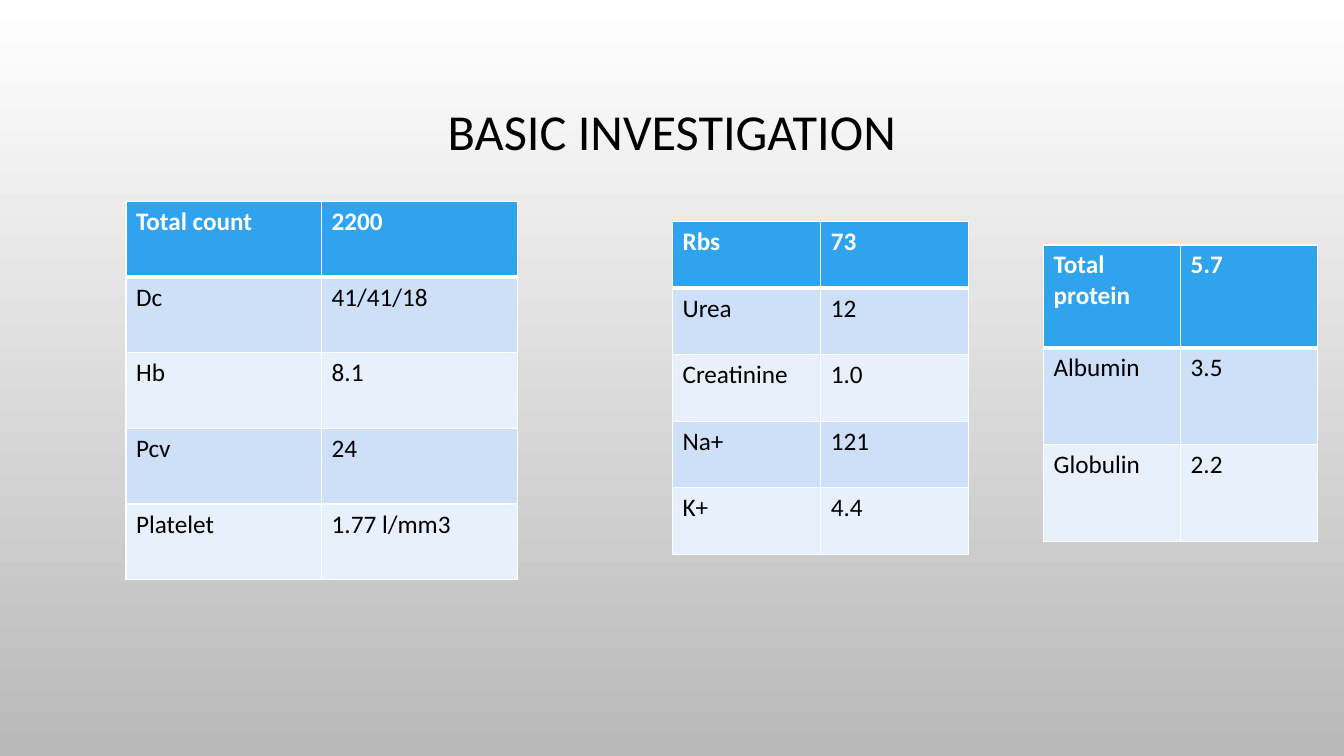
from lxml.etree import SubElement
from pptx import Presentation
from pptx.dml.color import RGBColor
from pptx.enum.text import MSO_ANCHOR, PP_ALIGN
from pptx.oxml.ns import qn
from pptx.util import Inches, Pt

THEME = {
    "font": "Calibri",
    "title_size": 36,
    "cell_size": 18,
    "ink": "000000",
    "white": "FFFFFF",
    "header": "2FA3EE",
    "bands": ["E8F0FC", "CDE0F8"],
    "background": ["FFFFFF", "B9B9B9"],
}

INVESTIGATIONS = [
    {"left": 1.25, "top": 2, "column": 1.94, "heights": [0.75] * 5,
     "rows": [("Total count", "2200"), ("Dc", "41/41/18"), ("Hb", "8.1"),
              ("Pcv", "24"), ("Platelet", "1.77 l/mm3")]},
    {"left": 6.67, "top": 2.2, "column": 1.47, "heights": [0.66] * 5,
     "rows": [("Rbs", "73"), ("Urea", "12"), ("Creatinine", "1.0"),
              ("Na+", "121"), ("K+", "4.4")]},
    {"left": 10.35, "top": 2.43, "column": 1.36, "heights": [1.02, 0.96, 0.96],
     "rows": [("Total protein", "5.7"), ("Albumin", "3.5"), ("Globulin", "2.2")]},
]


def write_text(frame, text, size, color, bold=False, align=PP_ALIGN.LEFT, spacing=None):
    frame.word_wrap = True
    para = frame.paragraphs[0]
    para.alignment = align
    para.line_spacing = spacing
    span = para.add_run()
    span.text = text
    span.font.name = THEME["font"]
    span.font.size = Pt(size)
    span.font.bold = bold
    span.font.color.rgb = RGBColor.from_string(color)


def draw_borders(cell, top, bottom):
    properties = cell._tc.get_or_add_tcPr()
    for side, width in (("L", 1), ("R", 1), ("T", top), ("B", bottom)):
        line = SubElement(properties, qn(f"a:ln{side}"), w=str(Pt(width)))
        fill = SubElement(line, qn("a:solidFill"))
        SubElement(fill, qn("a:srgbClr"), val=THEME["white"])


deck = Presentation()
deck.slide_width = Inches(13.33)
deck.slide_height = Inches(7.5)
page = deck.slides.add_slide(deck.slide_layouts[6])

backdrop = page.background.fill
backdrop.gradient()
backdrop.gradient_angle = 270
for stop, color in zip(backdrop.gradient_stops, THEME["background"]):
    stop.color.rgb = RGBColor.from_string(color)

title_box = page.shapes.add_textbox(Inches(1.25), Inches(0.67), Inches(10.83), Inches(1.33))
title_box.text_frame.vertical_anchor = MSO_ANCHOR.MIDDLE
write_text(title_box.text_frame, "BASIC INVESTIGATION", size=THEME["title_size"],
           color=THEME["ink"], align=PP_ALIGN.CENTER, spacing=0.9)

for group in INVESTIGATIONS:
    rows = group["rows"]
    table = page.shapes.add_table(
        len(rows), 2, Inches(group["left"]), Inches(group["top"]),
        Inches(2 * group["column"]), Inches(sum(group["heights"]))).table
    for column in table.columns:
        column.width = Inches(group["column"])
    for row_index, (values, height) in enumerate(zip(rows, group["heights"])):
        table.rows[row_index].height = Inches(height)
        is_header = row_index == 0
        fill_color = THEME["header"] if is_header else THEME["bands"][row_index % 2]
        for column_index, value in enumerate(values):
            cell = table.cell(row_index, column_index)
            draw_borders(cell, top=3 if row_index == 1 else 1, bottom=3 if is_header else 1)
            cell.fill.solid()
            cell.fill.fore_color.rgb = RGBColor.from_string(fill_color)
            write_text(cell.text_frame, value, size=THEME["cell_size"],
                       color=THEME["white"] if is_header else THEME["ink"], bold=is_header)

deck.save("out.pptx")
